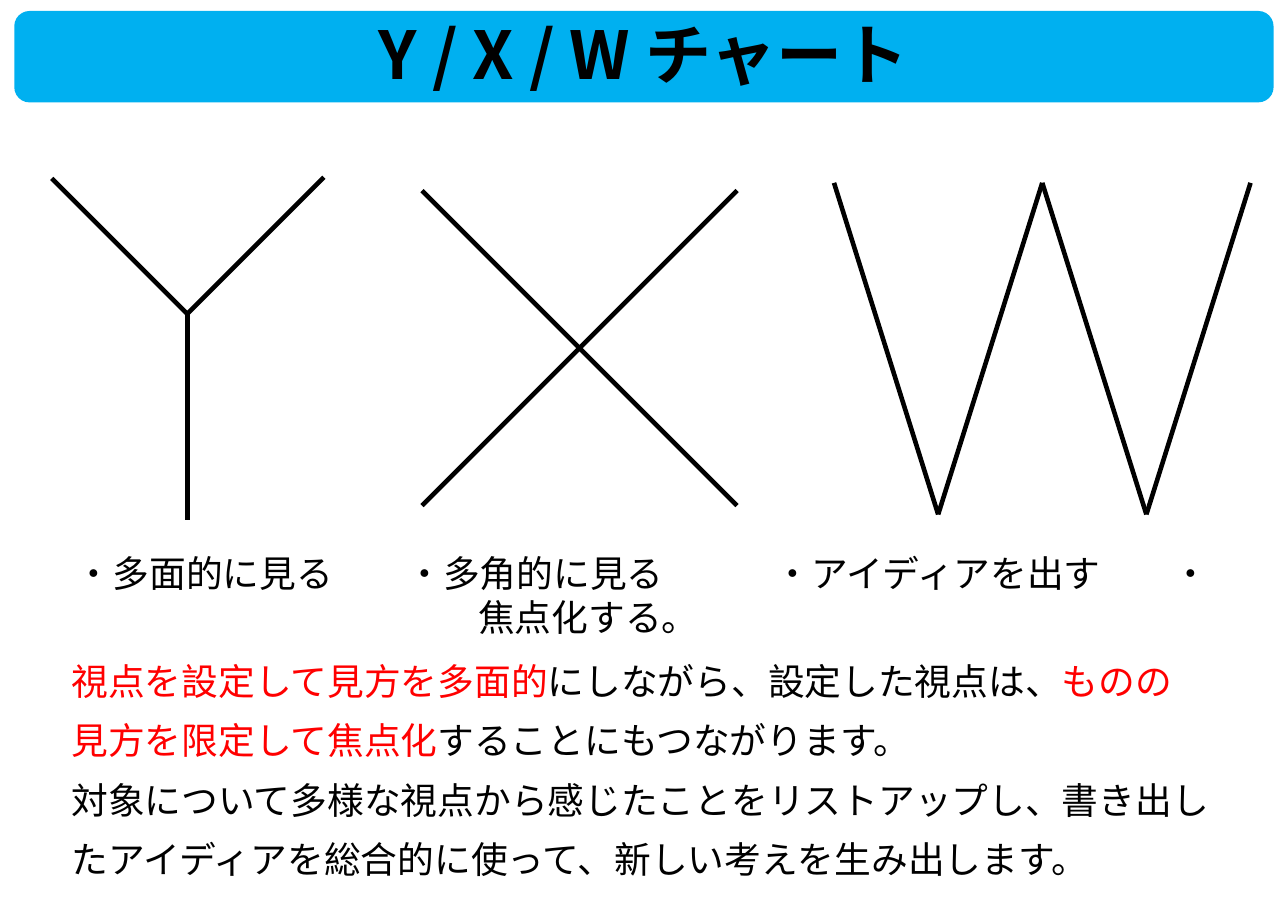
from itertools import pairwise

from lxml.etree import SubElement
from pptx import Presentation
from pptx.dml.color import RGBColor
from pptx.enum.shapes import MSO_CONNECTOR, MSO_SHAPE
from pptx.enum.text import MSO_ANCHOR, MSO_AUTO_SIZE, PP_ALIGN
from pptx.oxml.ns import qn
from pptx.util import Inches, Pt

FONT = "Noto Sans CJK JP"
COLORS = {"banner": "00B0F0", "ink": "000000", "key": "FF0000"}
W, H = 11.69, 8.27
LINE = Pt(28.8)


def add_run(p, text, size=24, color="ink", bold=False):
    r = p.add_run()
    r.text = text
    r.font.size, r.font.bold, r.font.name = Pt(size), bold, FONT
    r.font.color.rgb = RGBColor.from_string(COLORS[color])
    SubElement(r.font._element, qn("a:ea"), typeface=FONT)


def add_text_box(x, y, w, h):
    tf = s.shapes.add_textbox(Inches(x), Inches(y), Inches(w), Inches(h)).text_frame
    tf.word_wrap = True
    return tf


prs = Presentation()
prs.slide_width, prs.slide_height = Inches(W), Inches(H)
s = prs.slides.add_slide(prs.slide_layouts[5])

# Title on its banner
title = s.shapes.title
title.left, title.top, title.width, title.height = 0, Inches(0.1), Inches(W), Inches(0.83)
tf = title.text_frame
tf.auto_size = MSO_AUTO_SIZE.NONE
tf.vertical_anchor = MSO_ANCHOR.MIDDLE
p = tf.paragraphs[0]
p.alignment = PP_ALIGN.CENTER
p.line_spacing = Pt(47)
add_run(p, "Y / X / W チャート", 43.2, bold=True)

banner = s.shapes.add_shape(MSO_SHAPE.ROUNDED_RECTANGLE, Inches(0.13), Inches(0.1),
                            Inches(W - 0.26), Inches(0.83))
banner.shadow.inherit = False
banner.fill.solid()
banner.fill.fore_color.rgb = RGBColor.from_string(COLORS["banner"])
banner.line.fill.background()
title.element.addprevious(banner.element)

# Y, X and W drawn as strokes
fork = (1.7, 2.85)
y_strokes = [(end, fork) for end in [(0.47, 1.62), (2.94, 1.61), (1.7, 4.72)]]
left, right, top, bottom = 3.83, 6.69, 1.73, 4.59
x_strokes = [((right, top), (left, bottom)), ((left, top), (right, bottom))]
zigzag = [(7.57 + i * 0.945, 4.67 if i % 2 else 1.66) for i in range(5)]
w_strokes = list(pairwise(zigzag))

for start, end in y_strokes + x_strokes + w_strokes:
    stroke = s.shapes.add_connector(MSO_CONNECTOR.STRAIGHT, *map(Inches, start + end))
    stroke.line.width = Pt(3)
    stroke.line.color.rgb = RGBColor.from_string(COLORS["ink"])
    SubElement(stroke.element.spPr, qn("a:effectLst"))

# Captions under the letters, set on tab stops
tf = add_text_box(0.47, 4.95, 10.74, 0.9)
tf.margin_left = Inches(0.22)
p = tf.paragraphs[0]
p.line_spacing = LINE
tabs = SubElement(p._p.get_or_add_pPr(), qn("a:tabLst"))
for stop in (3.0, 6.34, 9.95):
    SubElement(tabs, qn("a:tab"), pos=str(Inches(stop)), algn="l")
add_run(p, "・多面的に見る\t・多角的に見る\t・アイディアを出す\t・")
p = tf.add_paragraph()
p.line_spacing = LINE
p._p.get_or_add_pPr().set("marL", str(Inches(3.65)))
add_run(p, "焦点化する。")

# Explanation
explanation = [
    [("視点を設定して見方を多面的", "key"), ("にしながら、設定した視点は、", "ink"), ("ものの", "key")],
    [("見方を限定して焦点化", "key"), ("することにもつながります。", "ink")],
    [("対象について多様な視点から感じたことをリストアップし、書き出し", "ink")],
    [("たアイディアを総合的に使って、新しい考えを生み出します。", "ink")],
]
tf = add_text_box(0.55, 5.93, 10.6, 2.14)
for i, runs in enumerate(explanation):
    p = tf.add_paragraph() if i else tf.paragraphs[0]
    p.line_spacing = LINE
    p.space_before = Pt(10 if i else 0)
    for text, color in runs:
        add_run(p, text, color=color)

prs.save("out.pptx")
